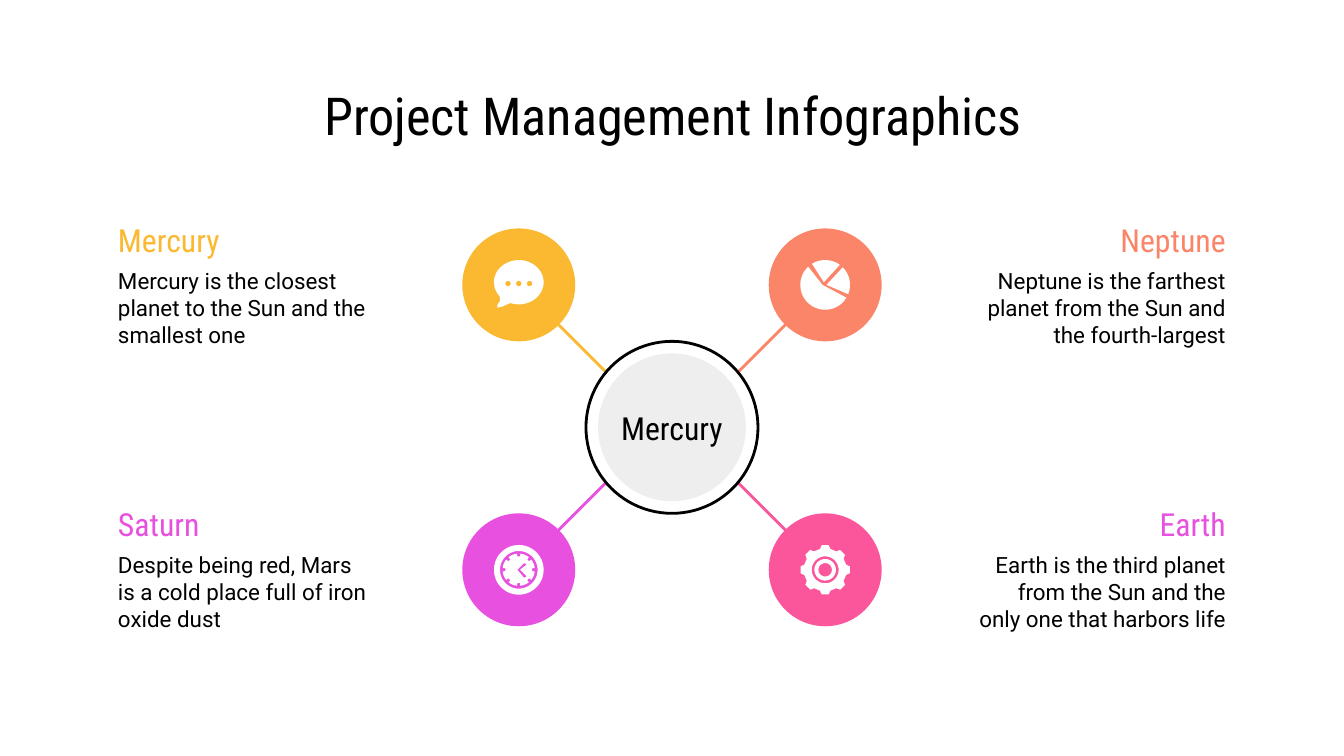
from math import cos, radians, sin

from lxml import etree
from pptx import Presentation
from pptx.dml.color import RGBColor
from pptx.enum.shapes import MSO_CONNECTOR, MSO_SHAPE
from pptx.enum.text import MSO_ANCHOR, MSO_AUTO_SIZE, PP_ALIGN
from pptx.oxml.ns import qn
from pptx.util import Inches, Pt

LEFT, CENTER, RIGHT = PP_ALIGN.LEFT, PP_ALIGN.CENTER, PP_ALIGN.RIGHT
TOP, MIDDLE = MSO_ANCHOR.TOP, MSO_ANCHOR.MIDDLE
OVAL, STRAIGHT = MSO_SHAPE.OVAL, MSO_CONNECTOR.STRAIGHT
HEADING_FONT, BODY_FONT = "Roboto Condensed", "Roboto"
BLACK, WHITE, GRAY = "000000", "FFFFFF", "EEEEEE"

TITLE = "Project Management Infographics"
HUB_LABEL = "Mercury"
PLANETS = [
    {"side": -1, "row": -1, "icon": "chat", "color": "FBB831", "heading": "Mercury", "heading_color": "FBB831",
     "body": "Mercury is the closest planet to the Sun and the smallest one"},
    {"side": 1, "row": -1, "icon": "pie", "color": "FB8569", "heading": "Neptune", "heading_color": "FB8569",
     "body": "Neptune is the farthest planet from the Sun and the fourth-largest"},
    {"side": -1, "row": 1, "icon": "clock", "color": "E850E0", "heading": "Saturn", "heading_color": "E850E0",
     "body": "Despite being red, Mars is a cold place full of iron oxide dust"},
    {"side": 1, "row": 1, "icon": "gear", "color": "FB569C", "heading": "Earth", "heading_color": "E850E0",
     "body": "Earth is the third planet from the Sun and the only one that harbors life"},
]

HUB_X, HUB_Y = 5, 3.18
OFFSET_X, OFFSET_Y = 1.14, 1.06
NODE_RADIUS, ICON_RADIUS = 0.42, 0.37 / 2
SPOKE = 0.85
TEXT_WIDTH, TEXT_LEFT = 2.06, {-1: 0.78, 1: 7.16}
HEADING_TOP = {-1: 1.59, 1: 3.7}


def polar(radius, degrees):
    """Return the point at an angle and distance from the icon centre."""
    angle = radians(degrees)
    return radius * cos(angle), radius * sin(angle)


def arc(radius, start=0, end=360):
    """Return points along an arc, a full circle by default."""
    steps = max(1, round((end - start) / 8))
    return [polar(radius, start + (end - start) * step / steps) for step in range(steps + 1)]


def around(profile):
    """Repeat a profile of turns and radii eight times round a circle."""
    return [polar(radius, center + turn) for center in range(0, 360, 45) for turn, radius in profile]


def bubble():
    """Return the outline of a speech bubble with its tail."""
    body = [(x, y * 0.89 - 0.02) for x, y in arc(ICON_RADIUS, 140, 470)]
    return body + [(-0.12, 0.16), (-0.16, 0.17), (-0.16, 0.15), (-0.14, 0.12)]


def dot(x, y):
    """Return a small circle around a point."""
    return [(x + dx, y + dy) for dx, dy in arc(0.02)]


TOOTH = [(-14, 0.16), (-8, ICON_RADIUS), (8, ICON_RADIUS), (14, 0.16)]
NOTCH = [(-6, 0.12), (-6, 0.1), (6, 0.1), (6, 0.12), (14, 0.12), (22, 0.12), (30, 0.12)]
HANDS = [(0.04, -0.05), (0.06, -0.04), (0.01, 0), (0.06, 0.05), (0.04, 0.06), (-0.01, 0)]
SLICES = [((-0.02, 0), 31, 227), ((-0.01, -0.02), 238, 306), ((0.01, 0), 315, 382)]
ICONS = {
    "chat": [[bubble(), dot(-0.08, -0.01), dot(0, -0.01), dot(0.08, -0.01)]],
    "pie": [[[apex, *arc(ICON_RADIUS, start, end)]] for apex, start, end in SLICES],
    "clock": [[arc(ICON_RADIUS), arc(0.14)], [around(NOTCH), HANDS]],
    "gear": [[around(TOOTH), arc(0.1)], [arc(0.08), arc(0.05)]],
}


def rgb(color):
    """Return the colour for a hex string."""
    return RGBColor.from_string(color)


def write(shape, text, size, font, color, align, anchor, side_inset=0.1):
    """Put one formatted paragraph into a shape."""
    frame = shape.text_frame
    frame.text = text
    frame.word_wrap = True
    frame.auto_size = MSO_AUTO_SIZE.NONE
    frame.vertical_anchor = anchor
    frame.margin_left = frame.margin_right = Inches(side_inset)
    frame.margin_top = frame.margin_bottom = Inches(0.1)
    paragraph = frame.paragraphs[0]
    paragraph.alignment = align
    run_font = paragraph.runs[0].font
    run_font.name, run_font.size = font, Pt(size)
    run_font.color.rgb = rgb(color)


def add_text(slide, box, *style):
    """Add a text box with the given style."""
    write(slide.shapes.add_textbox(*map(Inches, box)), *style)


def paint(shape, fill, line=None):
    """Set the fill and outline of a shape."""
    shape.shadow.inherit = False
    shape.fill.solid()
    shape.fill.fore_color.rgb = rgb(fill)
    if line:
        shape.line.color.rgb = rgb(line)
        shape.line.width = Pt(1.5)
    else:
        shape.line.fill.background()


def add_circle(slide, x, y, radius, fill, line=None):
    """Add a circle around a centre."""
    box = x - radius, y - radius, 2 * radius, 2 * radius
    shape = slide.shapes.add_shape(OVAL, *map(Inches, box))
    paint(shape, fill, line)
    return shape


def add_spoke(slide, start, end, color):
    """Add a straight connector without a shadow."""
    spoke = slide.shapes.add_connector(STRAIGHT, *map(Inches, (*start, *end)))
    spoke.line.color.rgb = rgb(color)
    spoke.line.width = Pt(1.5)
    etree.SubElement(spoke._element.spPr, qn("a:effectLst"))


def add_outline(slide, x, y, contours):
    """Add a white shape whose later contours cut holes in the first."""
    placed = [[(Inches(x + dx), Inches(y + dy)) for dx, dy in contour] for contour in contours]
    builder = slide.shapes.build_freeform(*placed[0][0])
    builder.add_line_segments(placed[0][1:])
    for hole in placed[1:]:
        builder.move_to(*hole[0])
        builder.add_line_segments(hole[1:])
    paint(builder.convert_to_shape(), WHITE)


def add_planet(slide, planet):
    """Add the spoke, node, icon and texts of one planet."""
    side, row = planet["side"], planet["row"]
    x, y = HUB_X + side * OFFSET_X, HUB_Y + row * OFFSET_Y
    spoke_start = HUB_Y - row * 0.08
    add_circle(slide, x, y, NODE_RADIUS, planet["color"])
    add_spoke(slide, (HUB_X, spoke_start), (HUB_X + side * SPOKE, spoke_start + row * SPOKE), planet["color"])
    for contours in ICONS[planet["icon"]]:
        add_outline(slide, x, y, contours)
    left, top = TEXT_LEFT[side], HEADING_TOP[row]
    align = LEFT if side < 0 else RIGHT
    add_text(slide, (left, top + 0.3, TEXT_WIDTH, 0.84), planet["body"], 12, BODY_FONT, BLACK, align, TOP)
    add_text(slide, (left, top, TEXT_WIDTH, 0.39), planet["heading"], 17, HEADING_FONT,
             planet["heading_color"], align, MIDDLE)


def main():
    """Build and save the slide."""
    presentation = Presentation()
    presentation.slide_width = Inches(10)
    presentation.slide_height = Inches(10) * 9 // 16
    slide = presentation.slides.add_slide(presentation.slide_layouts[5])
    title = slide.shapes.title
    title.left, title.top, title.width, title.height = map(Inches, (0.78, 0.59, 8.45, 0.53))
    write(title, TITLE, 28, HEADING_FONT, BLACK, CENTER, MIDDLE)
    for planet in PLANETS:
        add_planet(slide, planet)
    add_circle(slide, HUB_X, HUB_Y, 0.64, WHITE, BLACK)
    hub = add_circle(slide, HUB_X, HUB_Y, 0.55, GRAY)
    write(hub, HUB_LABEL, 17, HEADING_FONT, BLACK, CENTER, MIDDLE, 0)
    presentation.save("out.pptx")


if __name__ == "__main__":
    main()
